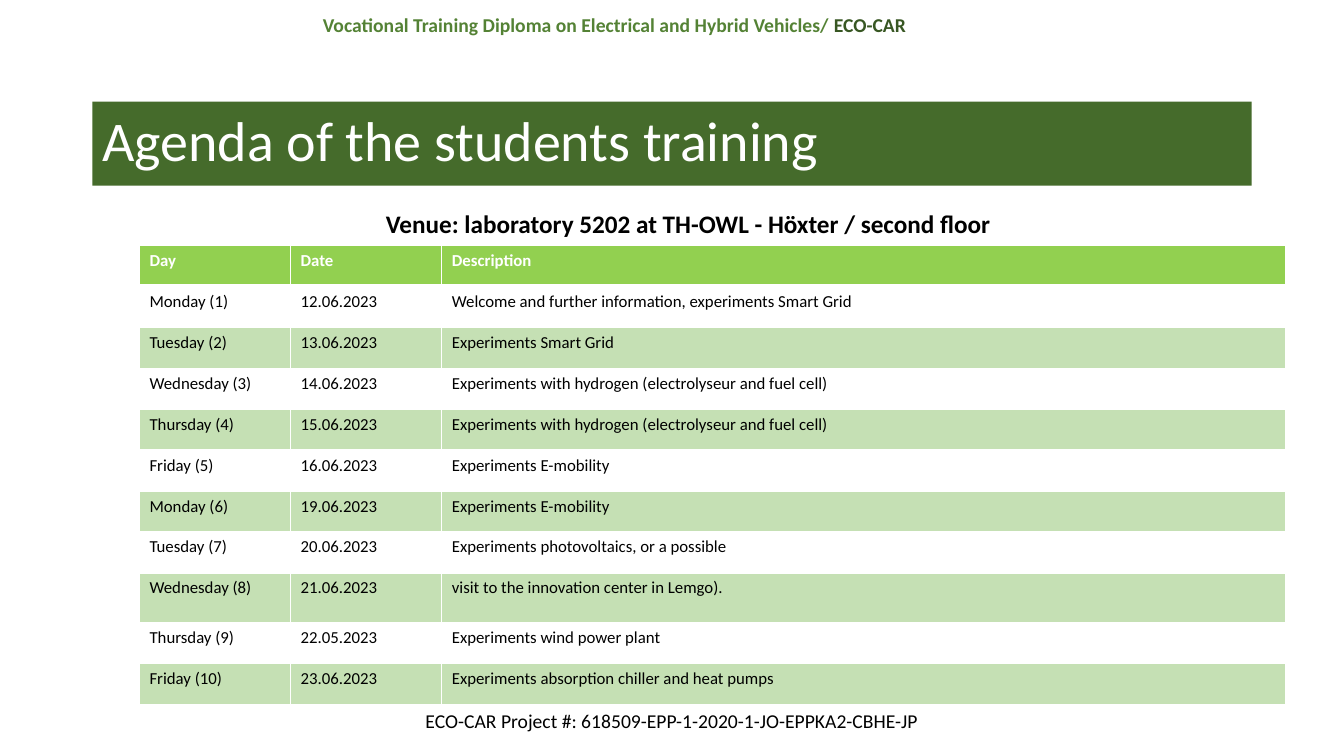
from lxml import etree
from pptx import Presentation
from pptx import util as u
from pptx.dml.color import RGBColor
from pptx.enum import shapes, text
from pptx.oxml import ns

THEME = {
    "font": "Calibri",
    "black": "000000", "white": "FFFFFF", "title_fill": "456B2B",
    "header": "548235", "project": "385723",
    "table_head": "92D050", "band": "C5E0B4",
    "title_size": 40, "venue_size": 18, "margin_size": 14, "table_size": 12,
}
LEFT, CENTER = text.PP_ALIGN.LEFT, text.PP_ALIGN.CENTER
TOP, MIDDLE = text.MSO_ANCHOR.TOP, text.MSO_ANCHOR.MIDDLE

presentation = Presentation()
presentation.slide_width = u.Inches(13.333)
presentation.slide_height = u.Inches(7.5)
slide = presentation.slides.add_slide(presentation.slide_layouts[6])
column = presentation.slide_width / 160
row = presentation.slide_height / 90


def place(left, top, width, height):
    return [round(left * column), round(top * row), round(width * column), round(height * row)]


def write(paragraph, runs, size, bold=False, **layout):
    for name, value in layout.items():
        setattr(paragraph, name, value)
    for words, color in runs:
        run = paragraph.add_run()
        run.text = words
        for name, value in {"name": THEME["font"], "size": u.Pt(size), "bold": bold}.items():
            setattr(run.font, name, value)
        run.font.color.rgb = RGBColor.from_string(THEME[color])


text_blocks = [
    ((47, 83.4, 66, 4.8), None, MIDDLE,
     [("ECO-CAR Project #: 618509-EPP-1-2020-1-JO-EPPKA2-CBHE-JP", "black")],
     {"size": THEME["margin_size"], "alignment": CENTER}),
    ((29, 1, 88.3, 6.8), None, TOP,
     [("Vocational Training Diploma on Electrical and Hybrid Vehicles/ ", "header"),
      ("ECO-CAR", "project")],
     {"size": THEME["margin_size"], "bold": True, "alignment": CENTER}),
    ((11, 12.1, 138, 10), "title_fill", MIDDLE,
     [("Agenda of the students training", "white")],
     {"size": THEME["title_size"], "alignment": LEFT, "line_spacing": 0.9}),
    ((20.2, 24, 123.5, 5.2), None, TOP,
     [("Venue: laboratory 5202 at TH-OWL - Höxter / second floor", "black")],
     {"size": THEME["venue_size"], "bold": True, "alignment": CENTER,
      "line_spacing": 1.07, "space_after": u.Pt(8)}),
]
for area, fill, anchor, runs, style in text_blocks:
    if fill:
        shape = slide.shapes.add_shape(shapes.MSO_SHAPE.RECTANGLE, *place(*area))
        shape.shadow.inherit = False
        shape.fill.solid()
        shape.fill.fore_color.rgb = RGBColor.from_string(THEME[fill])
        shape.line.fill.background()
    else:
        shape = slide.shapes.add_textbox(*place(*area))
    shape.text_frame.word_wrap = True
    shape.text_frame.vertical_anchor = anchor
    write(shape.text_frame.paragraphs[0], runs, **style)

agenda = [
    ("Day", "Date", "Description"),
    ("Monday (1)", "12.06.2023", "Welcome and further information, experiments Smart Grid"),
    ("Tuesday (2)", "13.06.2023", "Experiments Smart Grid"),
    ("Wednesday (3)", "14.06.2023", "Experiments with hydrogen (electrolyseur and fuel cell)"),
    ("Thursday (4)", "15.06.2023", "Experiments with hydrogen (electrolyseur and fuel cell)"),
    ("Friday (5)", "16.06.2023", "Experiments E-mobility"),
    ("Monday (6)", "19.06.2023", "Experiments E-mobility"),
    ("Tuesday (7)", "20.06.2023", "Experiments photovoltaics, or a possible"),
    ("Wednesday (8)", "21.06.2023", "visit to the innovation center in Lemgo)."),
    ("Thursday (9)", "22.05.2023", "Experiments wind power plant"),
    ("Friday (10)", "23.06.2023", "Experiments absorption chiller and heat pumps"),
]
column_spans = [18, 18, 100.5]
row_span, visit_row, visit_span = 4.88, 8, 5.9
table_height = row_span * (len(agenda) - 1) + visit_span
table = slide.shapes.add_table(
    len(agenda), len(column_spans), *place(16.6, 29.2, sum(column_spans), table_height)).table
for table_column, span in zip(table.columns, column_spans):
    table_column.width = round(span * column)

for index, entry in enumerate(agenda):
    heading = index == 0
    table.rows[index].height = round((visit_span if index == visit_row else row_span) * row)
    fill = "table_head" if heading else "white" if index % 2 else "band"
    for cell, words in zip(table.rows[index].cells, entry):
        cell.fill.solid()
        cell.fill.fore_color.rgb = RGBColor.from_string(THEME[fill])
        write(cell.text_frame.paragraphs[0], [(words, "white" if heading else "black")],
              THEME["table_size"], heading)
        properties = cell._tc.get_or_add_tcPr()
        for position, side in enumerate(["lnL", "lnR", "lnT", "lnB"]):
            thick = (heading and side == "lnB") or (index == 1 and side == "lnT")
            border = etree.Element(ns.qn("a:" + side), w=str(u.Pt(3 if thick else 1)))
            solid = etree.SubElement(border, ns.qn("a:solidFill"))
            etree.SubElement(solid, ns.qn("a:srgbClr"), val=THEME["white"])
            properties.insert(position, border)

presentation.save("out.pptx")
